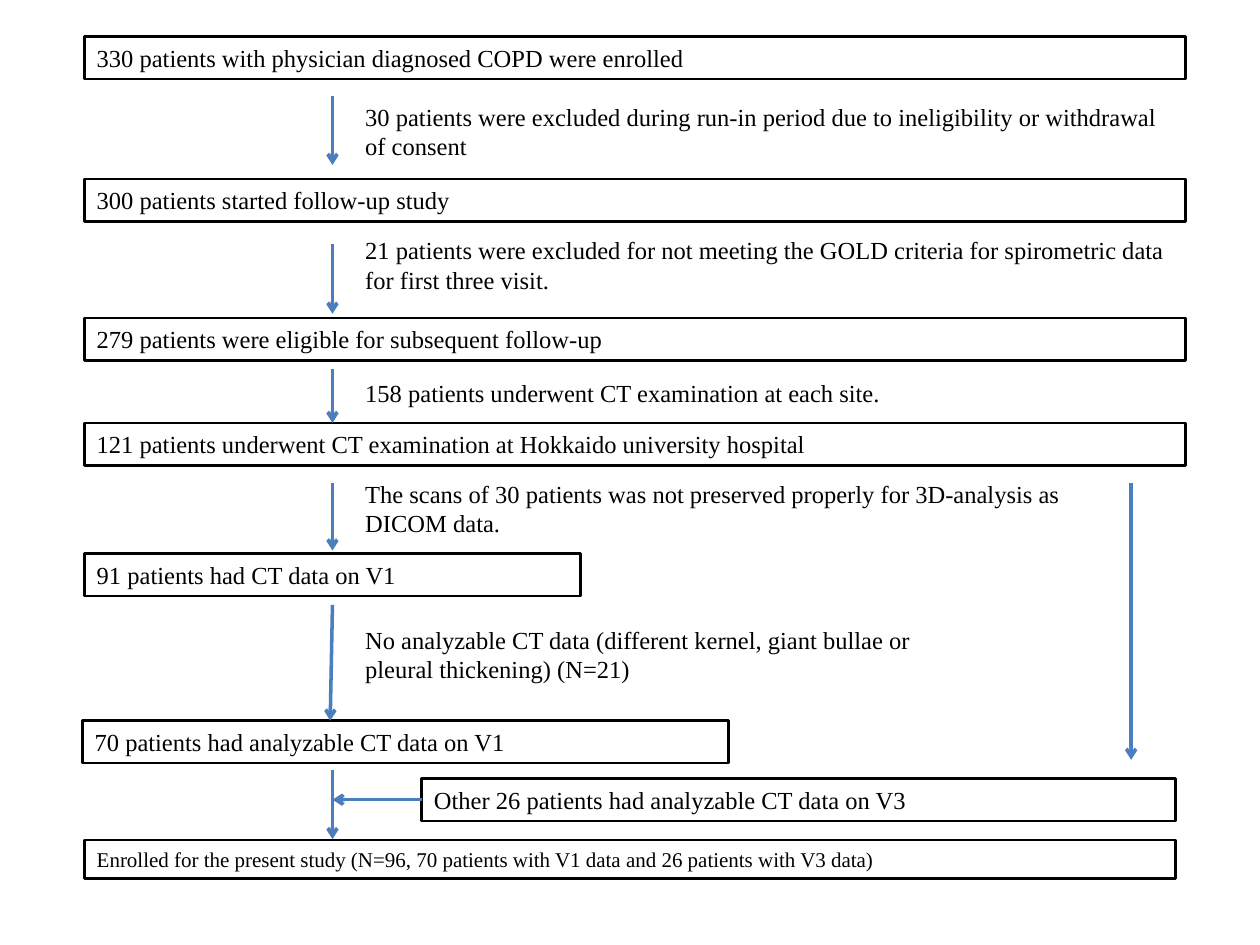
from dataclasses import dataclass

from lxml import etree
from pptx import Presentation
from pptx import util as u
from pptx.dml.color import RGBColor
from pptx.enum import shapes, text
from pptx.oxml import ns


@dataclass(frozen=True)
class Theme:
    font: str = "Times New Roman"
    ink: RGBColor = RGBColor(0, 0, 0)
    arrow: RGBColor = RGBColor(0x4B, 0x7E, 0xBC)
    body: float = 14
    small: float = 12
    border: float = 1.5
    stroke: float = 2


def write(box, words, *, font, size, color):
    frame = box.text_frame
    frame.word_wrap = True
    frame.auto_size = text.MSO_AUTO_SIZE.SHAPE_TO_FIT_TEXT
    frame.vertical_anchor = text.MSO_ANCHOR.TOP
    para = frame.paragraphs[0]
    para.alignment = text.PP_ALIGN.LEFT
    span = para.add_run()
    span.text = words
    span.font.name = font
    span.font.size = u.Pt(size)
    span.font.color.rgb = color


class FlowChart:
    def __init__(self, slide, theme):
        self.slide = slide
        self.theme = theme

    def label(self, words, box, size):
        write(box, words, font=self.theme.font, size=size, color=self.theme.ink)

    def stage(self, words, left, top, width, height=24.24, size=None):
        area = [u.Pt(value) for value in (left, top, width, height)]
        box = self.slide.shapes.add_shape(shapes.MSO_SHAPE.RECTANGLE, *area)
        box.shadow.inherit = False
        box.fill.background()
        box.line.color.rgb = self.theme.ink
        box.line.width = u.Pt(self.theme.border)
        self.label(words, box, size or self.theme.body)

    def note(self, words, top, width, height=41.2):
        area = [u.Pt(value) for value in (NOTE_LEFT, top, width, height)]
        self.label(words, self.slide.shapes.add_textbox(*area), self.theme.body)

    def arrow(self, *ends):
        line = self.slide.shapes.add_connector(
            shapes.MSO_CONNECTOR.STRAIGHT, *[u.Pt(value) for value in ends]
        )
        line.line.color.rgb = self.theme.arrow
        line.line.width = u.Pt(self.theme.stroke)
        etree.SubElement(line.line._get_or_add_ln(), ns.qn("a:tailEnd"), type="arrow")
        etree.SubElement(line._element.spPr, ns.qn("a:effectLst"))


LEFT, NOTE_LEFT, AXIS = 48.2, 201.6, 190
FULL, NOTE_WIDTH = 629.3, 475.9

STAGES = [
    ("330 patients with physician diagnosed COPD were enrolled", LEFT, 20.9, FULL),
    ("300 patients started follow-up study", LEFT, 102.4, FULL),
    ("279 patients were eligible for subsequent follow-up", LEFT, 181.7, FULL),
    ("121 patients underwent CT examination at Hokkaido university hospital", LEFT, 241.7, FULL),
    ("91 patients had CT data on V1", LEFT, 316.3, 283.5),
    ("70 patients had analyzable CT data on V1", 47, 411.8, 369.4),
    ("Other 26 patients had analyzable CT data on V3", 240.9, 444.9, 430.9),
]

NOTES = [
    ("30 patients were excluded during run-in period due to ineligibility "
     "or withdrawal of consent", 54.7, NOTE_WIDTH),
    ("21 patients were excluded for not meeting the GOLD criteria for "
     "spirometric data for first three visit.", 131, NOTE_WIDTH),
    ("158 patients underwent CT examination at each site.", 212.6, NOTE_WIDTH, 24.24),
    ("The scans of 30 patients was not preserved properly for 3D-analysis "
     "as DICOM data.", 270.2, 430.6),
    ("No analyzable CT data (different kernel, giant bullae or "
     "pleural thickening) (N=21)", 353.5, 360),
]

ARROWS = [
    (AXIS, 54.7, AXIS, 94.3),
    (AXIS, 139.7, AXIS, 179.3),
    (AXIS, 211, AXIS, 241.7),
    (AXIS, 275.8, AXIS, 314.6),
    (AXIS, 345.6, 188.7, 411.8),
    (AXIS, 440, AXIS, 479.5),
    (240.9, 457, AXIS, 457),
    (646.4, 275.8, 646.4, 434.2),
]


def main():
    deck = Presentation()
    deck.slide_width, deck.slide_height = u.Pt(720), u.Pt(540)
    page = deck.slides.add_slide(deck.slide_layouts[6])
    theme = Theme()
    chart = FlowChart(page, theme)
    for stage in STAGES:
        chart.stage(*stage)
    chart.stage(
        "Enrolled for the present study (N=96, 70 patients with V1 data "
        "and 26 patients with V3 data)",
        LEFT, 480.1, 623.6, height=21.8, size=theme.small,
    )
    for note in NOTES:
        chart.note(*note)
    for ends in ARROWS:
        chart.arrow(*ends)
    deck.save("out.pptx")


if __name__ == "__main__":
    main()
